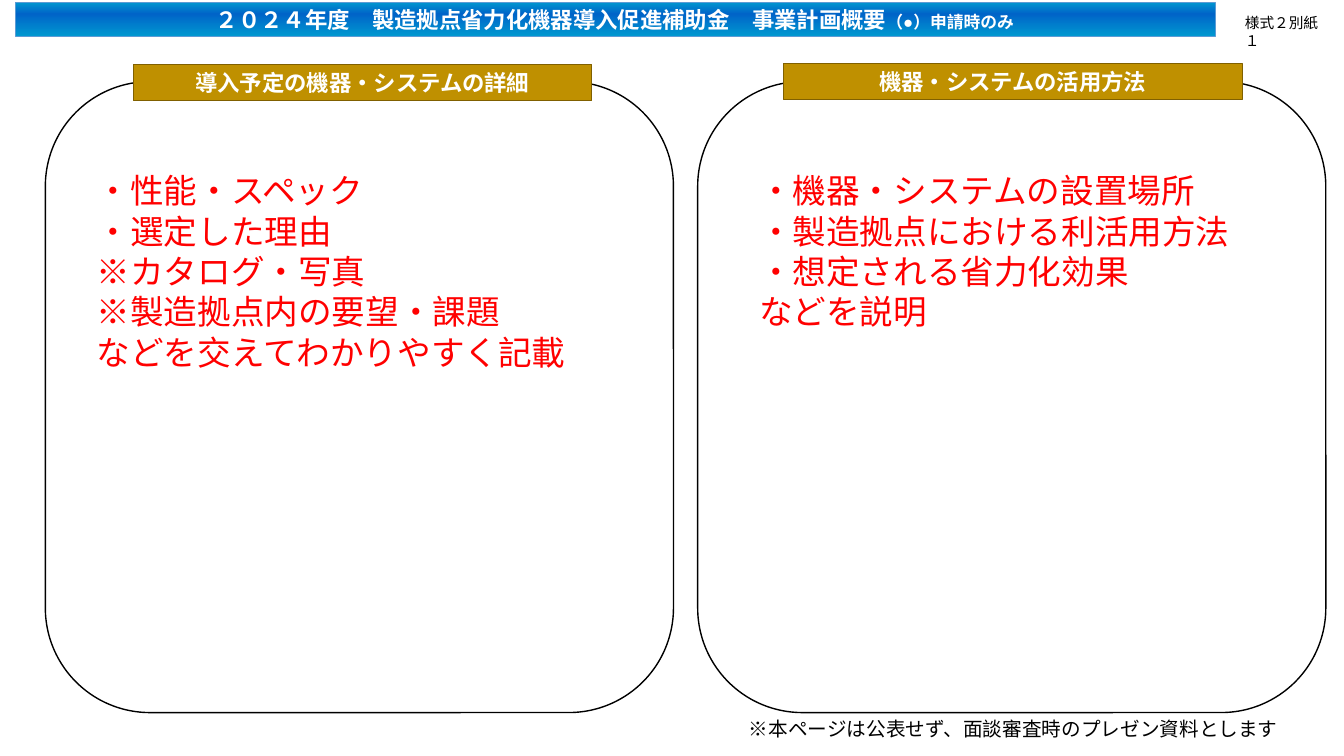
from copy import deepcopy
from dataclasses import dataclass

from lxml import etree
from pptx import Presentation
from pptx.dml.color import RGBColor
from pptx.enum.shapes import MSO_SHAPE
from pptx.enum.text import MSO_ANCHOR, PP_ALIGN
from pptx.oxml.ns import qn
from pptx.util import Inches, Pt

RECTANGLE, ROUNDED = MSO_SHAPE.RECTANGLE, MSO_SHAPE.ROUNDED_RECTANGLE
MIDDLE = MSO_ANCHOR.MIDDLE
CENTER, LEFT = PP_ALIGN.CENTER, PP_ALIGN.LEFT

MAIN_FONT, JAPANESE_FONT = "Arial", "Noto Sans CJK JP"
WHITE, BLACK, RED = "FFFFFF", "000000", "FF0000"
GOLD, DARK_GOLD = "BF9000", "806000"
BAR_STOPS = [(0, "0098D0"), (0.35, "0064C8"), (1, "0098D0")]
LINE_PITCH = 1.2


@dataclass
class Area:
    left: float
    top: float
    width: float
    height: float

    def lengths(self):
        return [Inches(n) for n in (self.left, self.top, self.width, self.height)]


@dataclass
class Span:
    text: str
    size: float
    color: str
    bold: bool = False
    font: str = MAIN_FONT


@dataclass
class Panel:
    frame: Area
    label: Area
    body: Area
    title: str
    lines: list[str]


def color(value: str) -> RGBColor:
    return RGBColor.from_string(value)


def add_span(para, span: Span) -> None:
    run = para.add_run()
    run.text = span.text
    values = {"name": span.font, "size": Pt(span.size), "bold": span.bold}
    for name, value in values.items():
        setattr(run.font, name, value)
    run.font.color.rgb = color(span.color)
    # The same typeface for East Asian characters
    east_asian = etree.SubElement(run.font._element, qn("a:ea"))
    east_asian.set("typeface", span.font)


def add_shape(slide, kind, area: Area, line: str, weight: float, fill: str = ""):
    shape = slide.shapes.add_shape(kind, *area.lengths())
    shape.shadow.inherit = False
    shape.line.color.rgb = color(line)
    shape.line.width = Pt(weight)
    if fill:
        shape.fill.solid()
        shape.fill.fore_color.rgb = color(fill)
    else:
        shape.fill.background()
    return shape


def add_heading(shape, spans: list[Span]) -> None:
    frame = shape.text_frame
    frame.word_wrap = True
    frame.vertical_anchor = MIDDLE
    para = frame.paragraphs[0]
    para.alignment = CENTER
    for span in spans:
        add_span(para, span)


def add_text(slide, area: Area, lines: list[str], size: float, ink: str) -> None:
    frame = slide.shapes.add_textbox(*area.lengths()).text_frame
    frame.word_wrap = True
    for index, line in enumerate(lines):
        para = frame.add_paragraph() if index else frame.paragraphs[0]
        para.alignment = LEFT
        para.line_spacing = Pt(size * LINE_PITCH)
        add_span(para, Span(line, size, ink))


def fill_with_bands(shape, bands: list[tuple[float, str]]) -> None:
    shape.fill.gradient()
    shape.fill.gradient_angle = 270
    stop_list = shape.fill.gradient_stops[0]._gs.getparent()
    stop_list.append(deepcopy(stop_list[-1]))
    for stop, (position, value) in zip(shape.fill.gradient_stops, bands):
        stop.position = position
        stop.color.rgb = color(value)


def add_panel(slide, panel: Panel) -> None:
    add_text(slide, panel.body, panel.lines, 24, RED)
    add_shape(slide, ROUNDED, panel.frame, BLACK, 1)
    label = add_shape(slide, RECTANGLE, panel.label, DARK_GOLD, 0.5, GOLD)
    add_heading(label, [Span(panel.title, 16, WHITE, True)])


PANELS = [
    Panel(
        Area(0.45, 0.81, 6.23, 6.26),
        Area(1.32, 0.64, 4.55, 0.36),
        Area(0.86, 1.64, 5.41, 2.12),
        "導入予定の機器・システムの詳細",
        ["・性能・スペック", "・選定した理由", "※カタログ・写真",
         "※製造拠点内の要望・課題", "などを交えてわかりやすく記載"],
    ),
    Panel(
        Area(6.92, 0.81, 6.23, 6.26),
        Area(7.77, 0.63, 4.55, 0.36),
        Area(7.43, 1.64, 5.41, 1.72),
        "機器・システムの活用方法",
        ["・機器・システムの設置場所", "・製造拠点における利活用方法",
         "・想定される省力化効果", "などを説明"],
    ),
]
BAR_SPANS = [
    Span("２０２４年度　", 16, WHITE, True),
    Span("製造拠点省力化機器導入促進補助金", 16, WHITE, True, JAPANESE_FONT),
    Span("　事業計画概要", 16, WHITE, True),
    Span("（●）申請時のみ", 12, WHITE, True),
]


def main() -> None:
    deck = Presentation()
    deck.slide_width, deck.slide_height = Inches(13.33), Inches(7.5)
    page = deck.slides.add_slide(deck.slide_layouts[6])

    # Title bar and form number
    bar = add_shape(page, RECTANGLE, Area(0.15, 0.02, 11.9, 0.34), "5B9BD5", 0.5)
    fill_with_bands(bar, BAR_STOPS)
    add_heading(bar, BAR_SPANS)
    add_text(page, Area(12.25, 0.09, 1, 0.28), ["様式２別紙１"], 10.5, BLACK)

    # Footnote
    note = "※本ページは公表せず、面談審査時のプレゼン資料とします"
    add_text(page, Area(7.33, 7.06, 6, 0.34), [note], 14, BLACK)

    # Equipment details and how it is used
    for panel in PANELS:
        add_panel(page, panel)

    deck.save("out.pptx")


if __name__ == "__main__":
    main()
